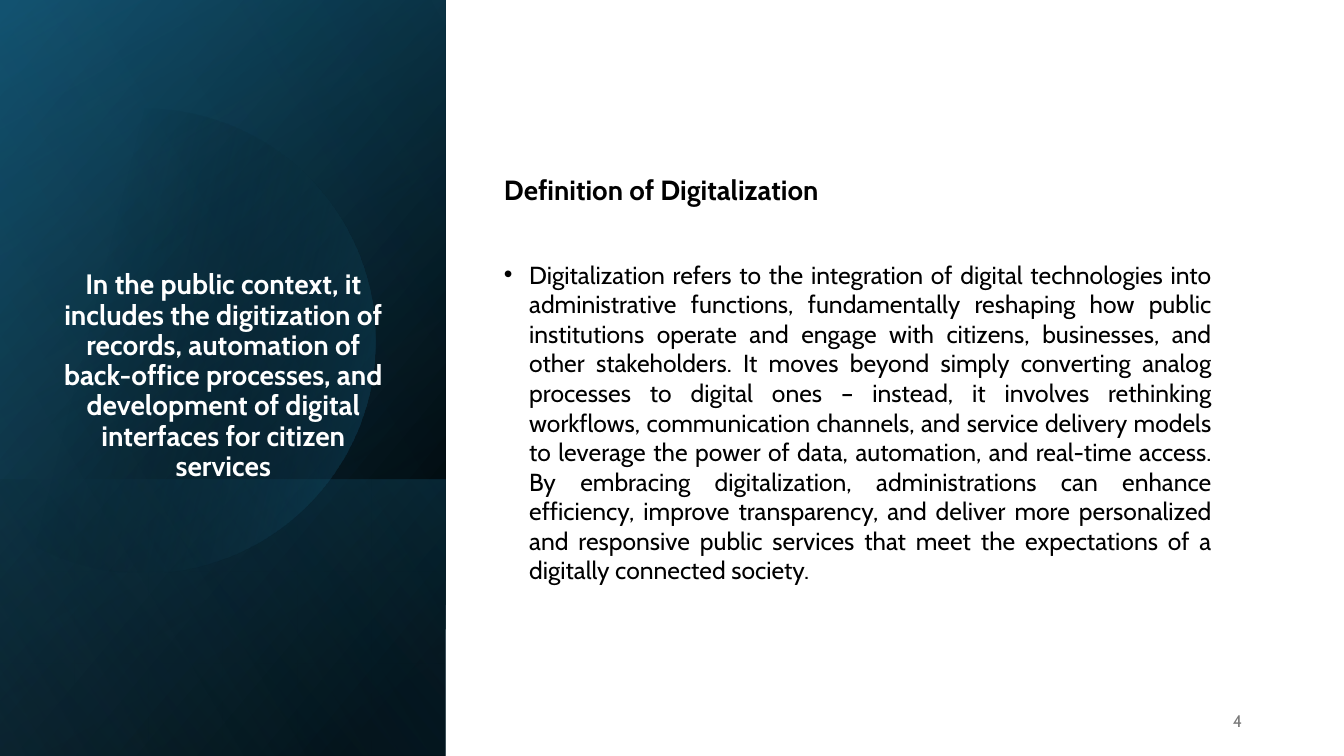
import math

import pptx
import pptx.dml.color
import pptx.enum.shapes
import pptx.enum.text
import pptx.oxml
import pptx.oxml.ns
import pptx.util
from lxml import etree

WIDTH, HEIGHT = 13.33, 7.5
PANEL_WIDTH = 4.42
FONT = "Cabin"
ALIGN = pptx.enum.text.PP_ALIGN
STATEMENT = ("In the public context, it includes the digitization of records, automation of "
             "back-office processes, and development of digital interfaces for citizen services")
HEADING = "Definition of Digitalization"
DEFINITION = (
    "Digitalization refers to the integration of digital technologies into administrative "
    "functions, fundamentally reshaping how public institutions operate and engage with "
    "citizens, businesses, and other stakeholders. It moves beyond simply converting analog "
    "processes to digital ones – instead, it involves rethinking workflows, communication "
    "channels, and service delivery models to leverage the power of data, automation, and "
    "real-time access. By embracing digitalization, administrations can enhance efficiency, "
    "improve transparency, and deliver more personalized and responsive public services that "
    "meet the expectations of a digitally connected society.")


def inches(*lengths):
    return [pptx.util.Inches(length) for length in lengths]


def color(value):
    return pptx.dml.color.RGBColor.from_string(value)


def child(parent, tag, **attributes):
    element = etree.SubElement(parent, pptx.oxml.ns.qn(tag))
    for name, value in attributes.items():
        element.set(name, str(value))
    return element


def fill_gradient(shape, stops, angle):
    """Fill with (position, colour, opacity) stops, in percent, along a clockwise angle."""
    shape.shadow.inherit = False
    shape.line.fill.background()
    shape.fill.gradient()
    gradient = shape._element.spPr.find(pptx.oxml.ns.qn("a:gradFill"))
    for old in list(gradient):
        gradient.remove(old)
    stop_list = child(gradient, "a:gsLst")
    for position, value, opacity in stops:
        stop = child(stop_list, "a:gs", pos=position * 1000)
        shade = child(stop, "a:srgbClr", val=value)
        if opacity < 100:
            child(shade, "a:alpha", val=opacity * 1000)
    child(gradient, "a:lin", ang=angle * 60000, scaled=0)


def add_rectangle(page, left, top, width, height):
    return page.shapes.add_shape(pptx.enum.shapes.MSO_SHAPE.RECTANGLE,
                                 *inches(left, top, width, height))


def add_turned_layer(page, box, stops, angle):
    """Cover the box with a mirrored rectangle turned by a quarter."""
    left, top, width, height = box
    shift = (width - height) / 2
    layer = add_rectangle(page, left + shift, top - shift, height, width)
    layer.rotation = 90
    layer._element.spPr.xfrm.set("flipH", "1")
    fill_gradient(layer, stops, angle)


def add_disc(page, center_x, center_y, radius):
    """Draw a disc cut off by the left edge of the slide."""
    limit = math.degrees(math.acos(-center_x / radius))
    angles = [math.radians(-limit + 2 * limit * step / 90) for step in range(91)]
    points = [tuple(inches(center_x + radius * math.cos(angle),
                           center_y + radius * math.sin(angle))) for angle in angles]
    outline = page.shapes.build_freeform(*points[0])
    outline.add_line_segments(points[1:], close=True)
    fill_gradient(outline.convert_to_shape(), [(29, "000000", 0), (100, "156082", 43)], 14)


def prepare_frame(box):
    frame = box.text_frame
    frame.word_wrap = True
    frame.auto_size = pptx.enum.text.MSO_AUTO_SIZE.NONE
    frame.vertical_anchor = pptx.enum.text.MSO_ANCHOR.MIDDLE
    return frame


def format_paragraph(para, text, size, value, align, bold=False, before=0):
    para.text = text
    para.alignment = align
    para.space_before = pptx.util.Pt(before)
    for span in para.runs:
        span.font.name = FONT
        span.font.size = pptx.util.Pt(size)
        span.font.bold = bold
        span.font.color.rgb = color(value)


def add_side_panel(page, box):
    left, top, width, height = box
    add_turned_layer(page, box, [(8, "000000", 100), (100, "104862", 100)], 50)
    add_turned_layer(page, box, [(0, "000000", 0), (99, "156082", 46)], 30)
    lower = 2.74
    add_turned_layer(page, (left, top + height - lower, width, lower),
                     [(2, "156082", 29), (100, "000000", 30)], 130)
    add_disc(page, left + 1.42, top + 3.38, 2.3)
    add_turned_layer(page, box, [(0, "000000", 0), (99, "46B1E1", 11)], 120)

    title = page.shapes.title
    title.left, title.top, title.width, title.height = inches(left + 0.49, top + 1.57, 3.45, 4.33)
    page.shapes._spTree.append(title._element)
    para = prepare_frame(title).paragraphs[0]
    format_paragraph(para, STATEMENT, 20, "FFFFFF", ALIGN.CENTER, bold=True, before=10)
    para.line_spacing = 0.9


def add_definition(page, box):
    frame = prepare_frame(page.shapes.add_textbox(*inches(*box)))
    format_paragraph(frame.paragraphs[0], HEADING, 19.8, "000000", ALIGN.JUSTIFY,
                     bold=True, before=10)
    para = frame.add_paragraph()
    format_paragraph(para, DEFINITION, 17.6, "000000", ALIGN.JUSTIFY, before=38)
    properties = para._p.get_or_add_pPr()
    indent = pptx.util.Inches(0.25)
    properties.set("marL", str(indent))
    properties.set("indent", str(-indent))
    child(properties, "a:buFont", typeface="Arial")
    child(properties, "a:buChar", char="•")


def add_page_number(page, box, number):
    frame = prepare_frame(page.shapes.add_textbox(*inches(*box)))
    format_paragraph(frame.paragraphs[0], str(number), 12, "797979", ALIGN.RIGHT)


def main():
    deck = pptx.Presentation()
    deck.slide_width, deck.slide_height = inches(WIDTH, HEIGHT)
    page = deck.slides.add_slide(deck.slide_layouts.get_by_name("Title Only"))
    backdrop = add_rectangle(page, 0, 0, WIDTH, HEIGHT)
    backdrop.shadow.inherit = False
    backdrop.fill.solid()
    backdrop.fill.fore_color.rgb = color("FFFFFF")
    backdrop.line.fill.background()
    add_side_panel(page, (0, 0, PANEL_WIDTH, HEIGHT))
    add_definition(page, (4.9, 1.4, 7.22, 4.72))
    add_page_number(page, (9.42, 6.95, 3, 0.4), 4)
    deck.save("out.pptx")


if __name__ == "__main__":
    main()
